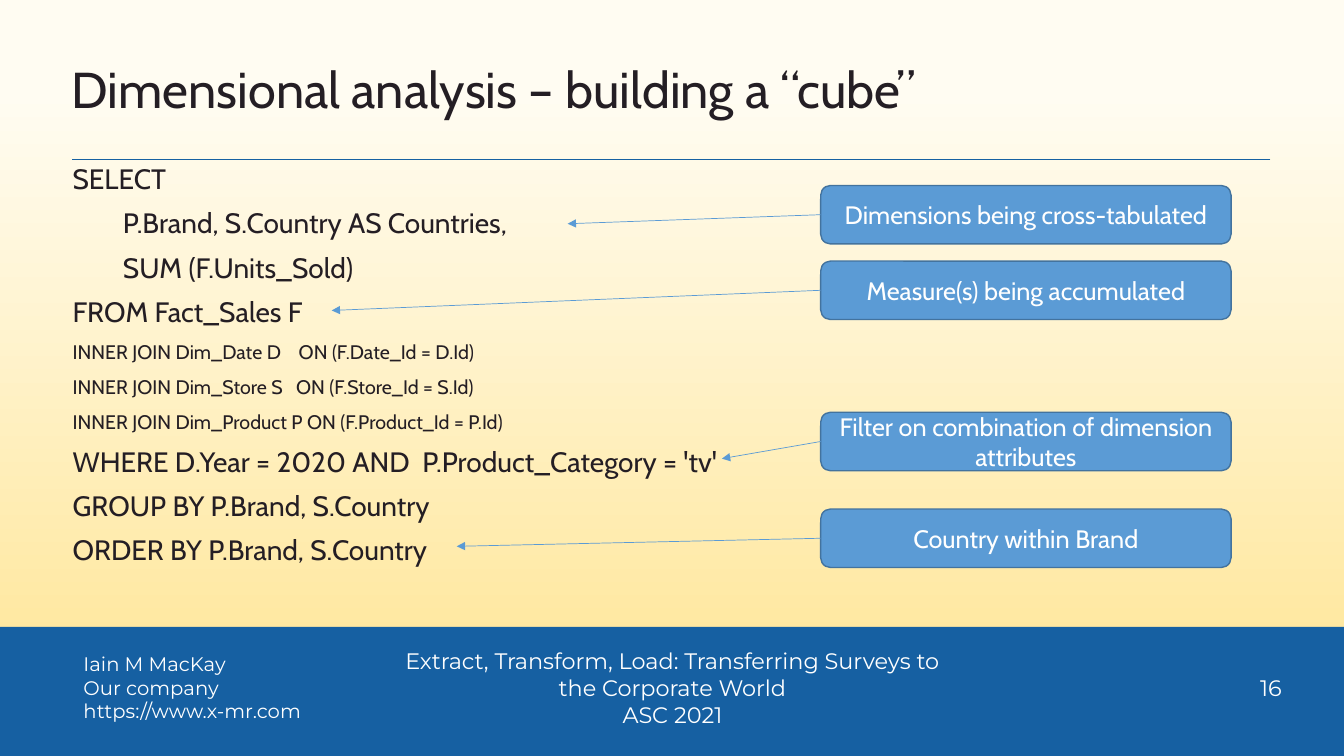
from lxml import etree
from pptx import Presentation
from pptx.dml.color import RGBColor
from pptx.enum.shapes import MSO_CONNECTOR, MSO_SHAPE
from pptx.enum.text import MSO_ANCHOR, PP_ALIGN
from pptx.oxml.ns import qn
from pptx.util import Pt

LEFT, CENTER, RIGHT = PP_ALIGN.LEFT, PP_ALIGN.CENTER, PP_ALIGN.RIGHT
TOP, MIDDLE = MSO_ANCHOR.TOP, MSO_ANCHOR.MIDDLE
RECTANGLE, ROUNDED = MSO_SHAPE.RECTANGLE, MSO_SHAPE.ROUNDED_RECTANGLE
STRAIGHT = MSO_CONNECTOR.STRAIGHT

EMU_PER_PX = 9144
PAGE_WIDTH, PAGE_HEIGHT = 1333, 750
INK, WHITE, NAVY = "241E24", "FFFFFF", "1660A2"
SKY, SKY_EDGE = "5B9BD5", "43739E"
BACKGROUND = [(0.12, "FFFCF2"), (0.91, "FFE699")]

TITLE = "Dimensional analysis – building a “cube”"
QUERY = [
    ("SELECT", 20),
    ("\tP.Brand, S.Country AS Countries,", 20),
    ("\tSUM (F.Units_Sold)", 20),
    ("FROM Fact_Sales F", 20),
    ("INNER JOIN Dim_Date D    ON (F.Date_Id = D.Id)", 14),
    ("INNER JOIN Dim_Store S   ON (F.Store_Id = S.Id)", 14),
    ("INNER JOIN Dim_Product P ON (F.Product_Id = P.Id)", 14),
    ("WHERE D.Year = 2020 AND  P.Product_Category = 'tv'", 20),
    ("GROUP BY P.Brand, S.Country", 20),
    ("ORDER BY P.Brand, S.Country", 20),
]
CALLOUT_LEFT, CALLOUT_WIDTH, CALLOUT_HEIGHT = 814, 407, 58
CALLOUTS = [
    ("Dimensions being cross-tabulated", 184, (563, 222)),
    ("Measure(s) being accumulated", 259, (329, 308)),
    ("Filter on combination of dimension attributes", 409, (716, 455)),
    ("Country within Brand", 505, (453, 542)),
]
FOOTERS = [
    (["Iain M MacKay", "Our company", "https://www.x-mr.com"],
     (73, 642, 370, 81), 14, LEFT),
    (["Extract, Transform, Load: Transferring Surveys to the Corporate World",
      "ASC 2021"], (390, 637, 554, 91), 16, CENTER),
    (["16"], (1054, 664, 227, 37), 16, RIGHT),
]


def px(*lengths):
    return [length * EMU_PER_PX for length in lengths]


def color(code):
    return RGBColor.from_string(code)


def write(box, lines, font="Cabin", ink=INK, align=LEFT, anchor=TOP,
          spacing=None, gap=0, inset=True):
    frame = box.text_frame
    frame.word_wrap = True
    frame.vertical_anchor = anchor
    if not inset:
        frame.margin_left = frame.margin_right = 0
        frame.margin_top = frame.margin_bottom = 0
    for index, (text, size) in enumerate(lines):
        para = frame.add_paragraph() if index else frame.paragraphs[0]
        para.alignment = align
        if spacing:
            para.line_spacing = spacing
        if index and gap:
            para.space_before = Pt(gap)
        span = para.add_run()
        span.text = text
        span.font.name = font
        span.font.size = Pt(size)
        span.font.color.rgb = color(ink)


def add_block(page, preset, place, fill, edge=None):
    block = page.shapes.add_shape(preset, *px(*place))
    block.shadow.inherit = False
    block.fill.solid()
    block.fill.fore_color.rgb = color(fill)
    if edge:
        block.line.color.rgb = color(edge)
        block.line.width = Pt(1)
    else:
        block.line.fill.background()
    return block


def add_line(page, start, end, ink, arrow=False):
    line = page.shapes.add_connector(STRAIGHT, *px(*start, *end))
    line.line.color.rgb = color(ink)
    line.line.width = Pt(0.5)
    if arrow:
        etree.SubElement(line.line._get_or_add_ln(), qn("a:tailEnd"), type="triangle")
    etree.SubElement(line._element.spPr, qn("a:effectLst"))


def main():
    deck = Presentation()
    deck.slide_width, deck.slide_height = px(PAGE_WIDTH, PAGE_HEIGHT)
    page = deck.slides.add_slide(deck.slide_layouts[6])

    backdrop = page.background.fill
    backdrop.gradient()
    backdrop.gradient_angle = 270
    for stop, (position, code) in zip(backdrop.gradient_stops, BACKGROUND):
        stop.position = position
        stop.color.rgb = color(code)

    add_block(page, RECTANGLE, (0, 622, PAGE_WIDTH, 128), NAVY)
    add_line(page, (1260, 158), (71, 158), NAVY)
    for texts, place, size, align in FOOTERS:
        box = page.shapes.add_textbox(*px(*place))
        write(box, [(text, size) for text in texts],
              font="Montserrat", ink=WHITE, align=align)

    title = page.shapes.add_textbox(*px(71, 40, 983, 102))
    write(title, [(TITLE, 36)], anchor=MIDDLE, spacing=0.9, inset=False)
    query = page.shapes.add_textbox(*px(72, 164, 1190, 378))
    write(query, QUERY, spacing=0.9, gap=10, inset=False)

    for text, top, target in CALLOUTS:
        place = (CALLOUT_LEFT, top, CALLOUT_WIDTH, CALLOUT_HEIGHT)
        callout = add_block(page, ROUNDED, place, SKY, SKY_EDGE)
        write(callout, [(text, 18)], ink=WHITE, align=CENTER, anchor=MIDDLE)
        start = (CALLOUT_LEFT, top + CALLOUT_HEIGHT // 2)
        add_line(page, start, target, SKY, arrow=True)

    deck.save("out.pptx")


if __name__ == "__main__":
    main()
